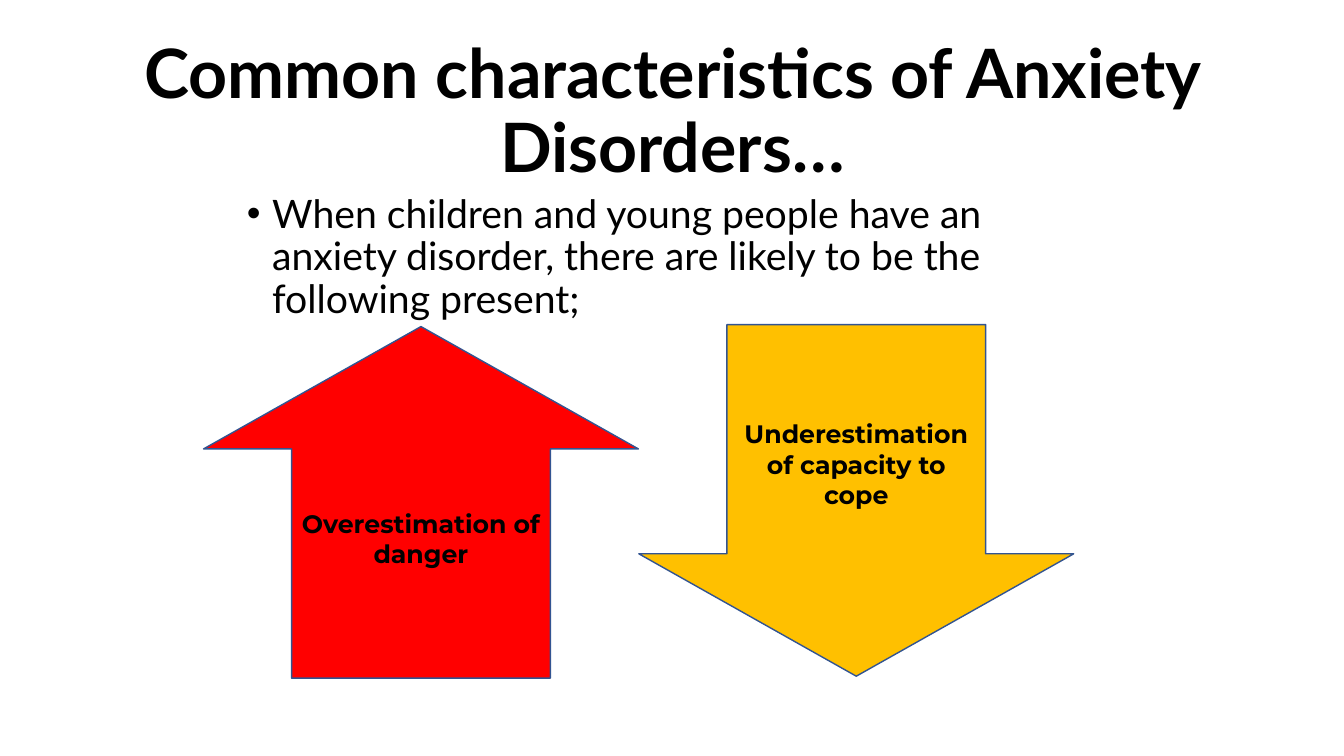
from lxml.etree import SubElement
from pptx import Presentation
from pptx.dml.color import RGBColor
from pptx.enum.shapes import MSO_SHAPE
from pptx.enum.text import MSO_ANCHOR, PP_ALIGN
from pptx.oxml.ns import qn
from pptx.util import Cm, Pt

BLACK = RGBColor(0x00, 0x00, 0x00)
RED = RGBColor(0xFF, 0x00, 0x00)
AMBER = RGBColor(0xFF, 0xC0, 0x00)
OUTLINE = RGBColor(0x32, 0x54, 0x91)


def write(box, text, font, size, bold=False, align=PP_ALIGN.CENTER,
          anchor=MSO_ANCHOR.MIDDLE, line_spacing=1.0, space_before=0):
    frame = box.text_frame
    frame.word_wrap = True
    frame.vertical_anchor = anchor
    para = frame.paragraphs[0]
    para.alignment = align
    para.line_spacing = line_spacing
    para.space_before = Pt(space_before)
    span = para.add_run()
    span.text = text
    span.font.name = font
    span.font.size = Pt(size)
    span.font.bold = bold
    span.font.color.rgb = BLACK
    return para


deck = Presentation()
deck.slide_width = Cm(33.87)
deck.slide_height = Cm(19.05)
page = deck.slides.add_slide(deck.slide_layouts[6])

title = page.shapes.add_textbox(Cm(2.34), Cm(1.02), Cm(29.21), Cm(3.68))
write(title, "Common characteristics of Anxiety Disorders…", "Lato", 48.6,
      bold=True, line_spacing=0.9)

body = page.shapes.add_textbox(Cm(5.97), Cm(4.78), Cm(21.89), Cm(12.09))
point = write(
    body,
    "When children and young people have an anxiety disorder, "
    "there are likely to be the following present;",
    "Lato", 28, align=PP_ALIGN.LEFT, anchor=MSO_ANCHOR.TOP,
    line_spacing=0.9, space_before=10)
properties = point._p.get_or_add_pPr()
properties.set("marL", str(Cm(0.64)))
properties.set("indent", str(-Cm(0.64)))
SubElement(properties, qn("a:buFont")).set("typeface", "Arial")
SubElement(properties, qn("a:buChar")).set("char", "•")

arrows = [
    (MSO_SHAPE.UP_ARROW, 5.13, 8.23, RED, "Overestimation of danger"),
    (MSO_SHAPE.DOWN_ARROW, 16.1, 8.18, AMBER,
     "Underestimation of capacity to cope"),
]
for kind, left, top, color, label in arrows:
    arrow = page.shapes.add_shape(kind, Cm(left), Cm(top), Cm(10.96), Cm(8.86))
    arrow.adjustments[0] = 0.595
    arrow.adjustments[1] = 0.348
    arrow.shadow.inherit = False
    arrow.fill.solid()
    arrow.fill.fore_color.rgb = color
    arrow.line.color.rgb = OUTLINE
    arrow.line.width = Pt(1)
    write(arrow, label, "Montserrat", 18, bold=True)

deck.save("out.pptx")
